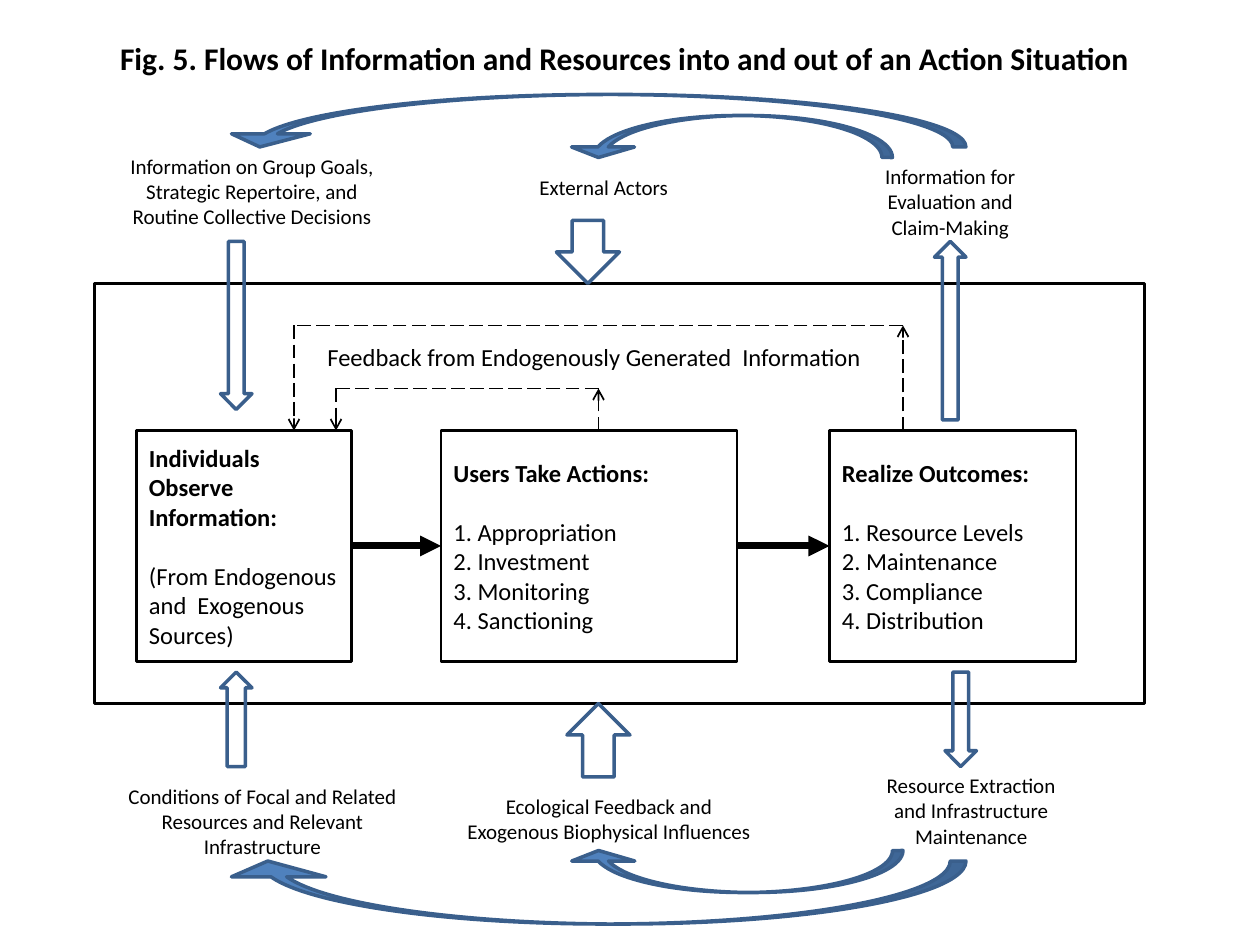
from lxml.etree import SubElement
from pptx import Presentation
from pptx.dml.color import RGBColor
from pptx.enum.dml import MSO_LINE as Dash
from pptx.enum.shapes import MSO_CONNECTOR as Connector, MSO_SHAPE as Shape
from pptx.enum.text import MSO_ANCHOR as Anchor, MSO_AUTO_SIZE as AutoSize, PP_ALIGN as Align
from pptx.oxml.ns import qn
from pptx.util import Pt

EMU_PER_PX = 7620
COLORS = {"ink": "000000", "flow": "4F81BD", "flow_edge": "3A5F8C"}


def px(*lengths):
    return [length * EMU_PER_PX for length in lengths]


def within(region, box):
    return region[0] + box[0], region[1] + box[1], box[2], box[3]


def color(name):
    return RGBColor.from_string(COLORS[name])


def write(holder, text, size=12, bold=False, heading=False, align=Align.LEFT,
          wrap=True, anchor=Anchor.TOP, fit=AutoSize.NONE):
    frame = holder.text_frame
    frame.word_wrap, frame.vertical_anchor, frame.auto_size = wrap, anchor, fit
    for index, line in enumerate(text.split("\n")):
        paragraph = frame.paragraphs[0] if index == 0 else frame.add_paragraph()
        paragraph.alignment = align
        is_heading = heading and index == 0
        if is_heading:
            paragraph.space_after = Pt(17)
        run = paragraph.add_run()
        run.text = line
        font = run.font
        font.name, font.size, font.bold = "Calibri", Pt(size), bold or is_heading
        font.color.rgb = color("ink")


def add_label(slide, box, text, **style):
    write(slide.shapes.add_textbox(*px(*box)), text, fit=AutoSize.SHAPE_TO_FIT_TEXT, **style)


def add_outline(slide, preset, box, line="ink", width=1.5, fill=None):
    shape = slide.shapes.add_shape(preset, *px(*box))
    shape.shadow.inherit = False
    shape.line.color.rgb, shape.line.width = color(line), Pt(width)
    if fill:
        shape.fill.solid()
        shape.fill.fore_color.rgb = color(fill)
    else:
        shape.fill.background()
    return shape


def add_line(slide, start, end, width=1, dash=None, head=None):
    line = slide.shapes.add_connector(Connector.STRAIGHT, *px(*start, *end))
    line.line.color.rgb, line.line.width = color("ink"), Pt(width)
    if dash:
        line.line.dash_style = dash
    if head:
        SubElement(line.line._get_or_add_ln(), qn("a:tailEnd"), type=head)
    SubElement(line._element.spPr, qn("a:effectLst"))


def add_title(slide, box, text):
    title = slide.shapes.title
    title.left, title.top, title.width, title.height = px(*box)
    write(title, text, size=18, bold=True, align=Align.CENTER, anchor=Anchor.MIDDLE)


def add_feedback_loop(slide, region, source_x, target_x, top, bottom):
    corners = [(region[0] + x, region[1] + y) for x, y in
               [(source_x, bottom), (source_x, top), (target_x, top), (target_x, bottom)]]
    for start, end, head in zip(corners, corners[1:], ["arrow", None, "arrow"]):
        add_line(slide, start, end, dash=Dash.LONG_DASH, head=head)


def add_action_situation(slide, region):
    add_outline(slide, Shape.RECTANGLE, region)
    stage_top, stage_height = 140, 220
    stages = [
        (40, 205, True, "Individuals Observe Information:\n"
                        "(From Endogenous and  Exogenous Sources)"),
        (330, 282, False, "Users Take Actions:\n1. Appropriation\n2. Investment\n"
                          "3. Monitoring\n4. Sanctioning"),
        (700, 235, False, "Realize Outcomes:\n1. Resource Levels\n2. Maintenance\n"
                          "3. Compliance\n4. Distribution"),
    ]
    for left, width, wrap, text in stages:
        box = within(region, (left, stage_top, width, stage_height))
        stage = add_outline(slide, Shape.RECTANGLE, box)
        write(stage, text, size=14, heading=True, wrap=wrap, anchor=Anchor.MIDDLE)

    middle = region[1] + stage_top + stage_height // 2
    for (left, width, *_), (following, *_) in zip(stages, stages[1:]):
        add_line(slide, (region[0] + left + width, middle), (region[0] + following, middle),
                 width=4, head="triangle")

    add_feedback_loop(slide, region, 770, 190, 40, stage_top)
    add_feedback_loop(slide, region, 480, 230, 100, stage_top)
    add_label(slide, within(region, (210, 50, 560, 41)),
              "Feedback from Endogenously Generated  Information", size=14)


def add_exchange(slide, region, labels, arrows, curves, below=False):
    for box, text in labels:
        add_label(slide, within(region, box), text, align=Align.CENTER)
    for preset, box, shaft in arrows:
        arrow = add_outline(slide, preset, within(region, box), "flow_edge", 2)
        arrow.adjustments[0] = shaft
    for box in curves:
        curve = add_outline(slide, Shape.CURVED_DOWN_ARROW, within(region, box),
                            "flow_edge", 2, "flow")
        curve.adjustments[1] = 1.5
        if below:
            curve.rotation = 180
        else:
            curve._element.spPr.find(qn("a:xfrm")).set("flipH", "1")


def main():
    deck = Presentation()
    deck.slide_width, deck.slide_height = px(1200, 900)
    slide = deck.slides.add_slide(deck.slide_layouts[5])

    add_title(slide, (80, 30, 1030, 50),
              "Fig. 5. Flows of Information and Resources into and out of an Action Situation")
    add_action_situation(slide, (90, 270, 1000, 400))
    add_exchange(
        slide, (90, 90, 1000, 310),
        labels=[
            ((10, 50, 280, 85), "Information on Group Goals, Strategic Repertoire, "
                                "and Routine Collective Decisions"),
            ((390, 70, 190, 36), "External Actors"),
            ((720, 60, 190, 85), "Information for Evaluation and Claim-Making"),
        ],
        arrows=[
            (Shape.DOWN_ARROW, (120, 140, 30, 160), 0.5),
            (Shape.DOWN_ARROW, (440, 120, 60, 60), 0.5),
            (Shape.UP_ARROW, (800, 140, 30, 170), 0.5),
        ],
        curves=[(120, 0, 710, 50), (450, 20, 310, 40)])
    add_exchange(
        slide, (90, 640, 1000, 240),
        labels=[
            ((10, 100, 300, 85), "Conditions of Focal and Related Resources "
                                 "and Relevant Infrastructure"),
            ((340, 110, 300, 60), "Ecological Feedback and Exogenous Biophysical Influences"),
            ((740, 90, 190, 85), "Resource Extraction and Infrastructure Maintenance"),
        ],
        arrows=[
            (Shape.UP_ARROW, (120, 0, 30, 90), 0.58),
            (Shape.UP_ARROW, (450, 30, 60, 70), 0.5),
            (Shape.DOWN_ARROW, (810, 0, 30, 90), 0.5),
        ],
        curves=[(120, 180, 710, 60), (450, 170, 320, 40)],
        below=True)
    deck.save("out.pptx")


if __name__ == "__main__":
    main()
